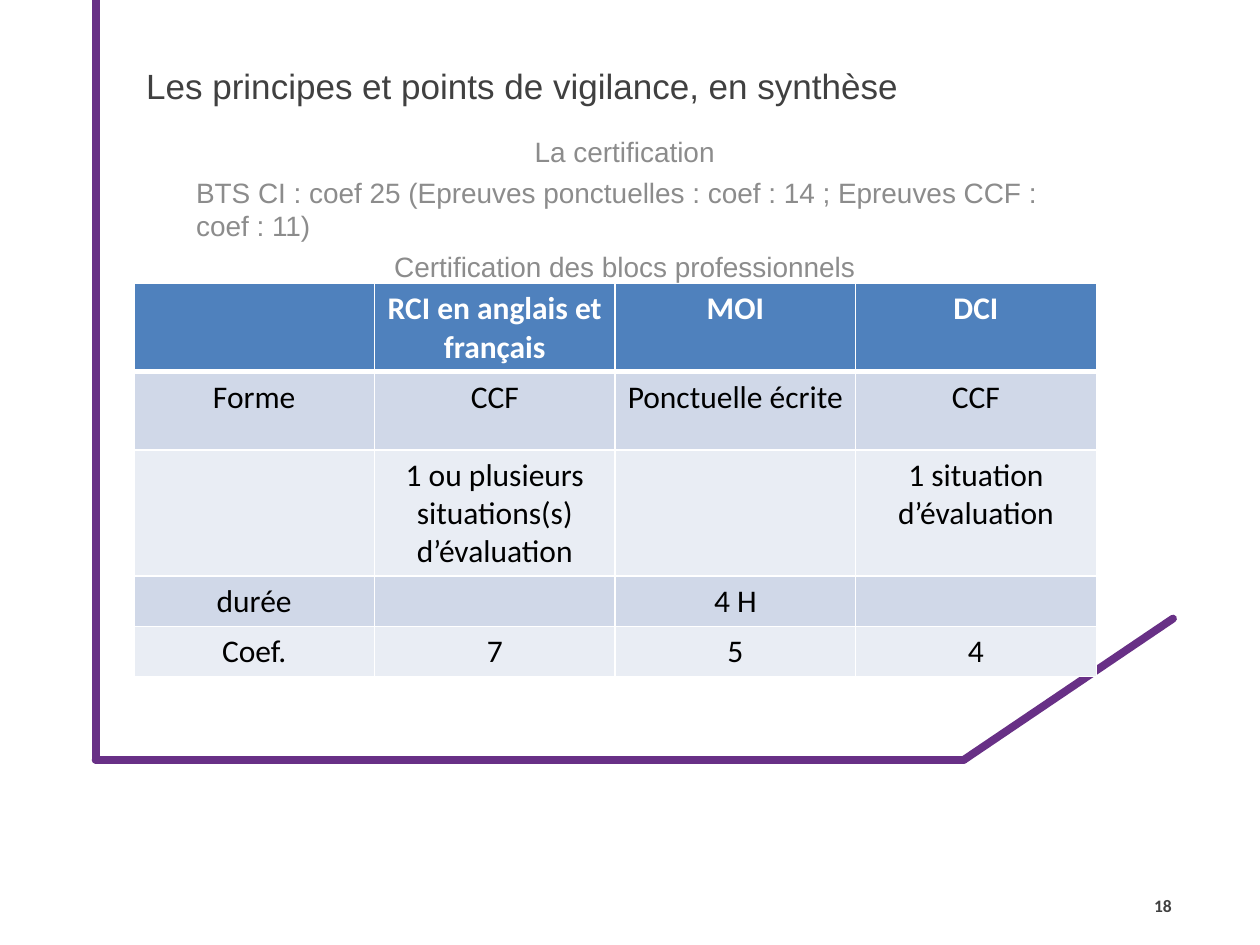
from dataclasses import dataclass

from lxml import etree
from pptx import Presentation
from pptx.dml.color import RGBColor
from pptx.enum.shapes import MSO_CONNECTOR
from pptx.enum.text import MSO_ANCHOR, MSO_AUTO_SIZE, PP_ALIGN
from pptx.oxml.ns import qn
from pptx.util import Pt

STRAIGHT = MSO_CONNECTOR.STRAIGHT
MIDDLE = MSO_ANCHOR.MIDDLE
TOP = MSO_ANCHOR.TOP
NO_AUTOFIT = MSO_AUTO_SIZE.NONE
LEFT, CENTER, RIGHT = PP_ALIGN.LEFT, PP_ALIGN.CENTER, PP_ALIGN.RIGHT
TITLE_ONLY = 5


@dataclass(frozen=True)
class Theme:
    frame: str = "683086"
    dark: str = "404040"
    muted: str = "8C8C8C"
    header: str = "4F81BD"
    bands: tuple = ("D0D8E8", "E9EDF4")
    white: str = "FFFFFF"
    black: str = "000000"
    heading_font: str = "Arial"
    table_font: str = "Calibri"
    title_size: int = 20
    intro_size: int = 16
    table_size: int = 18
    number_size: int = 10


THEME = Theme()

# Corners of the open frame, in drawing order
FRAME_CORNERS = [(54.7, 0), (54.7, 434.2), (550.8, 434.2), (670.3, 353.5)]

INTRO = [
    ("La certification", CENTER),
    ("BTS CI : coef 25 (Epreuves ponctuelles : coef : 14 ; Epreuves CCF : coef : 11)", LEFT),
    ("Certification des blocs professionnels", CENTER),
]

EXAMS = [
    ["", "RCI en anglais et français", "MOI", "DCI"],
    ["Forme", "CCF", "Ponctuelle écrite", "CCF"],
    ["", "1 ou plusieurs situations(s) d’évaluation", "", "1 situation d’évaluation"],
    ["durée", "", "4 H", ""],
    ["Coef.", "7", "5", "4"],
]
ROW_HEIGHTS = [44.6, 44.6, 64, 25.2, 25.2]
COLUMN_WIDTH = 137.5


def style_paragraph(paragraph, font, size, color, align, bold=False):
    paragraph.alignment = align
    paragraph.font.size = Pt(size)
    for run in paragraph.runs:
        run.font.name = font
        run.font.size = Pt(size)
        run.font.bold = bold
        run.font.color.rgb = RGBColor.from_string(color)


def add_frame(slide):
    for start, end in zip(FRAME_CORNERS, FRAME_CORNERS[1:]):
        side = slide.shapes.add_connector(STRAIGHT, *(Pt(v) for v in start + end))
        side.line.color.rgb = RGBColor.from_string(THEME.frame)
        side.line.width = Pt(4.5)
        side.line._get_or_add_ln().set("cap", "rnd")
        etree.SubElement(side._element.spPr, qn("a:effectLst"))


def set_title(slide, text):
    title = slide.shapes.title
    title.left, title.top, title.width, title.height = Pt(76.3), Pt(26), Pt(612), Pt(45.4)
    frame = title.text_frame
    frame.text = text
    frame.auto_size = NO_AUTOFIT
    frame.vertical_anchor = MIDDLE
    style_paragraph(frame.paragraphs[0], THEME.heading_font, THEME.title_size, THEME.dark, LEFT)


def add_text_box(slide, left, top, width, height, anchor):
    frame = slide.shapes.add_textbox(Pt(left), Pt(top), Pt(width), Pt(height)).text_frame
    frame.word_wrap = True
    frame.vertical_anchor = anchor
    return frame


def add_intro(slide):
    frame = add_text_box(slide, 105, 73.5, 504, 310, TOP)
    for index, (text, align) in enumerate(INTRO):
        line = frame.add_paragraph() if index else frame.paragraphs[0]
        line.text = text
        if index:
            line.space_before = Pt(4)
        style_paragraph(line, THEME.heading_font, THEME.intro_size, THEME.muted, align)


def add_page_number(slide, number):
    frame = add_text_box(slide, 645, 503.3, 31.7, 28.8, MIDDLE)
    frame.text = number
    style_paragraph(frame.paragraphs[0], THEME.table_font, THEME.number_size,
                    THEME.dark, RIGHT, bold=True)


def set_borders(cell, widths):
    properties = cell._tc.get_or_add_tcPr()
    for side, width in widths.items():
        border = etree.SubElement(properties, qn(f"a:ln{side}"), w=str(Pt(width)))
        fill = etree.SubElement(border, qn("a:solidFill"))
        etree.SubElement(fill, qn("a:srgbClr"), val=THEME.white)


def style_cell(cell, row):
    is_header = row == 0
    set_borders(cell, {"L": 1, "R": 1, "T": 3 if row == 1 else 1, "B": 3 if is_header else 1})
    cell.fill.solid()
    fill = THEME.header if is_header else THEME.bands[(row - 1) % 2]
    cell.fill.fore_color.rgb = RGBColor.from_string(fill)
    style_paragraph(cell.text_frame.paragraphs[0], THEME.table_font, THEME.table_size,
                    THEME.white if is_header else THEME.black, CENTER, bold=is_header)


def add_exam_table(slide):
    columns = len(EXAMS[0])
    table = slide.shapes.add_table(len(EXAMS), columns, Pt(76.5), Pt(162),
                                   Pt(COLUMN_WIDTH * columns), Pt(sum(ROW_HEIGHTS))).table
    for column in table.columns:
        column.width = Pt(COLUMN_WIDTH)
    for row, texts in enumerate(EXAMS):
        table.rows[row].height = Pt(ROW_HEIGHTS[row])
        for column, text in enumerate(texts):
            cell = table.cell(row, column)
            cell.text_frame.text = text
            style_cell(cell, row)


def main():
    deck = Presentation()
    deck.slide_width, deck.slide_height = Pt(720), Pt(540)
    slide = deck.slides.add_slide(deck.slide_layouts[TITLE_ONLY])

    # Decorative frame
    add_frame(slide)

    # Heading and introduction
    set_title(slide, "Les principes et points de vigilance, en synthèse")
    add_intro(slide)

    # Exam overview and page number
    add_page_number(slide, "18")
    add_exam_table(slide)

    deck.save("out.pptx")


if __name__ == "__main__":
    main()
